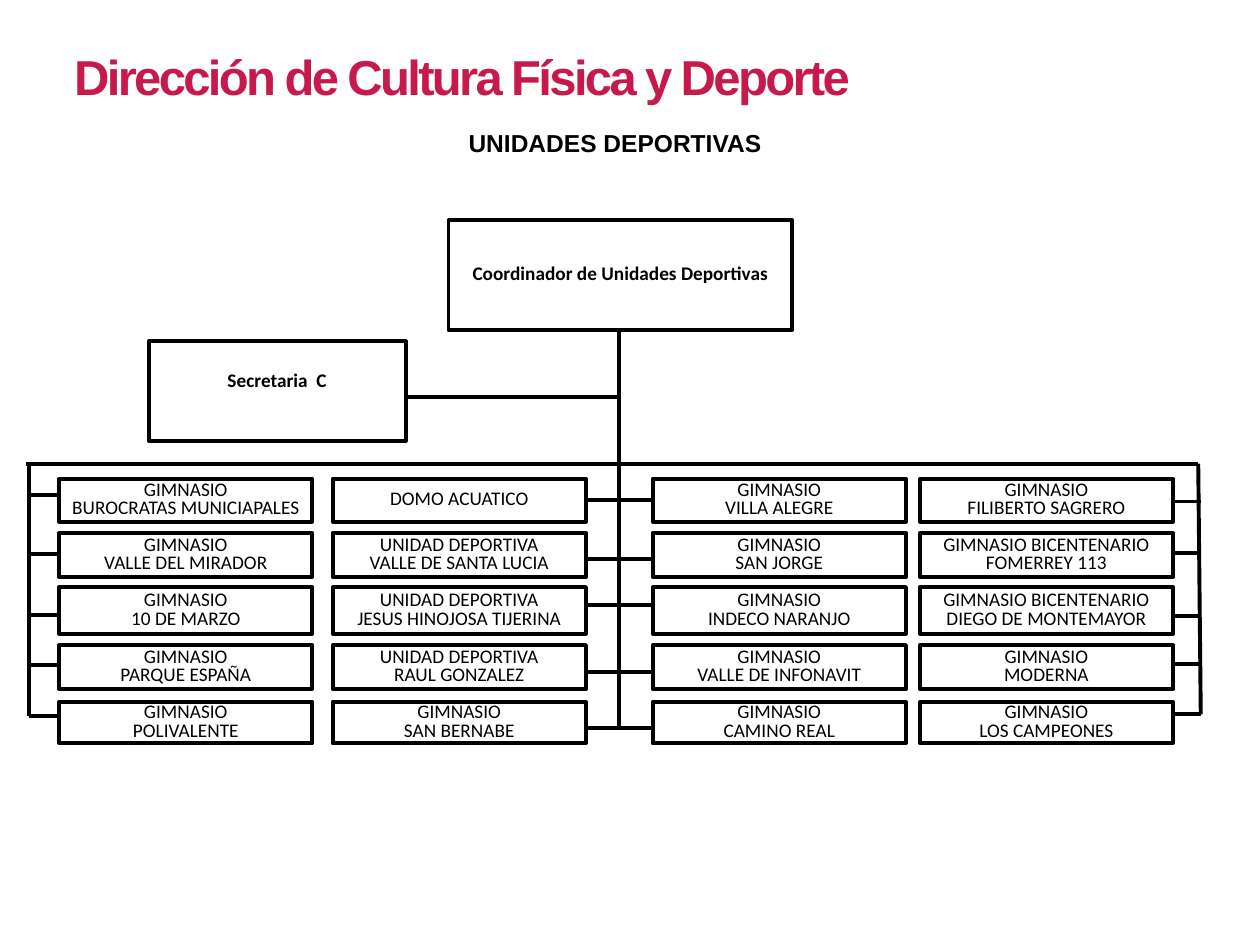
from lxml import etree
from pptx import Presentation
from pptx.dml.color import RGBColor
from pptx.enum.shapes import MSO_CONNECTOR, MSO_SHAPE
from pptx.enum.text import MSO_ANCHOR, MSO_AUTO_SIZE, PP_ALIGN
from pptx.oxml.ns import qn
from pptx.util import Inches, Pt

STRAIGHT = MSO_CONNECTOR.STRAIGHT
RECTANGLE = MSO_SHAPE.RECTANGLE
MIDDLE = MSO_ANCHOR.MIDDLE
CENTER = PP_ALIGN.CENTER
FIT_SHAPE = MSO_AUTO_SIZE.SHAPE_TO_FIT_TEXT
BLACK = "000000"
WHITE = "FFFFFF"
CRIMSON = "C51A4A"


def color(hex_string):
    return RGBColor.from_string(hex_string)


def add_box(left, top, width, height, lines, bold=False):
    box = slide.shapes.add_shape(
        RECTANGLE, Inches(left), Inches(top), Inches(width), Inches(height)
    )
    box.shadow.inherit = False
    box.fill.solid()
    box.fill.fore_color.rgb = color(WHITE)
    box.line.color.rgb = color(BLACK)
    box.line.width = Pt(2.25)
    frame = box.text_frame
    frame.word_wrap = False
    frame.vertical_anchor = MIDDLE
    frame.text = "\n".join(lines)
    for para in frame.paragraphs:
        para.alignment = CENTER
        para.line_spacing = 0.8
        para.font.name = "Calibri"
        para.font.size = Pt(11)
        para.font.bold = bold
        para.font.color.rgb = color(BLACK)
    return box


deck = Presentation()
deck.slide_width = Inches(10)
deck.slide_height = Inches(7.5)
slide = deck.slides.add_slide(deck.slide_layouts[6])

headings = [
    ("Dirección de Cultura Física y Deporte", 0.49, 0.32, 6.81, 0.57, 28, CRIMSON, True),
    ("UNIDADES DEPORTIVAS", 3.62, 0.97, 2.55, 0.34, 14, BLACK, False),
]
for text, left, top, width, height, size, ink, wraps in headings:
    heading = slide.shapes.add_textbox(
        Inches(left), Inches(top), Inches(width), Inches(height)
    )
    frame = heading.text_frame
    frame.word_wrap = wraps
    frame.auto_size = FIT_SHAPE
    para = frame.paragraphs[0]
    span = para.add_run()
    span.text = text
    para.font.name = "Arial"
    para.font.size = Pt(size)
    para.font.bold = True
    para.font.color.rgb = color(ink)
    if ink == CRIMSON:
        span.font.bold = True
        span.font._element.set("spc", "-150")

lines = [
    (1.23, 3.15, 4.91, 3.15),
    (0.21, 3.68, 9.51, 3.68),
    (0.23, 3.68, 0.23, 5.68),
    (4.91, 1.85, 4.91, 5.78),
    (9.51, 3.68, 9.53, 5.67),
]
branches = [
    (0.23, 0.47, [3.93, 4.40, 4.88, 5.28, 5.68]),
    (4.64, 5.18, [3.97, 4.44, 4.80, 5.33, 5.78]),
    (9.30, 9.53, [3.98, 4.39, 4.89, 5.27, 5.67]),
]
for start, end, heights in branches:
    lines += [(start, y, end, y) for y in heights]

for x1, y1, x2, y2 in lines:
    connector = slide.shapes.add_connector(
        STRAIGHT, Inches(x1), Inches(y1), Inches(x2), Inches(y2)
    )
    connector.line.color.rgb = color(BLACK)
    connector.line.width = Pt(2.25)
    etree.SubElement(connector._element.spPr, qn("a:effectLst"))

add_box(3.56, 1.75, 2.73, 0.87, ["Coordinador de Unidades Deportivas"], bold=True)
secretary = add_box(1.18, 2.71, 2.04, 0.79, ["Secretaria  C"], bold=True)
secretary.text_frame.margin_bottom = Inches(0.2)

rows = [(3.80, 0.34), (4.23, 0.35), (4.66, 0.37), (5.12, 0.35), (5.57, 0.33)]
columns = [
    (0.47, [
        ["GIMNASIO", "BUROCRATAS MUNICIAPALES"],
        ["GIMNASIO", "VALLE DEL MIRADOR"],
        ["GIMNASIO", "10 DE MARZO"],
        ["GIMNASIO", "PARQUE ESPAÑA"],
        ["GIMNASIO", "POLIVALENTE"],
    ]),
    (2.64, [
        ["DOMO ACUATICO"],
        ["UNIDAD DEPORTIVA", "VALLE DE SANTA LUCIA"],
        ["UNIDAD DEPORTIVA", "JESUS HINOJOSA TIJERINA"],
        ["UNIDAD DEPORTIVA", "RAUL GONZALEZ"],
        ["GIMNASIO", "SAN BERNABE"],
    ]),
    (5.18, [
        ["GIMNASIO", "VILLA ALEGRE"],
        ["GIMNASIO", "SAN JORGE"],
        ["GIMNASIO", "INDECO NARANJO"],
        ["GIMNASIO", "VALLE DE INFONAVIT"],
        ["GIMNASIO", "CAMINO REAL"],
    ]),
    (7.30, [
        ["GIMNASIO", "FILIBERTO SAGRERO"],
        ["GIMNASIO BICENTENARIO", "FOMERREY 113"],
        ["GIMNASIO BICENTENARIO", "DIEGO DE MONTEMAYOR"],
        ["GIMNASIO", "MODERNA"],
        ["GIMNASIO", "LOS CAMPEONES"],
    ]),
]
for left, venues in columns:
    for (top, height), venue in zip(rows, venues):
        add_box(left, top, 2.01, height, venue)

deck.save("out.pptx")
